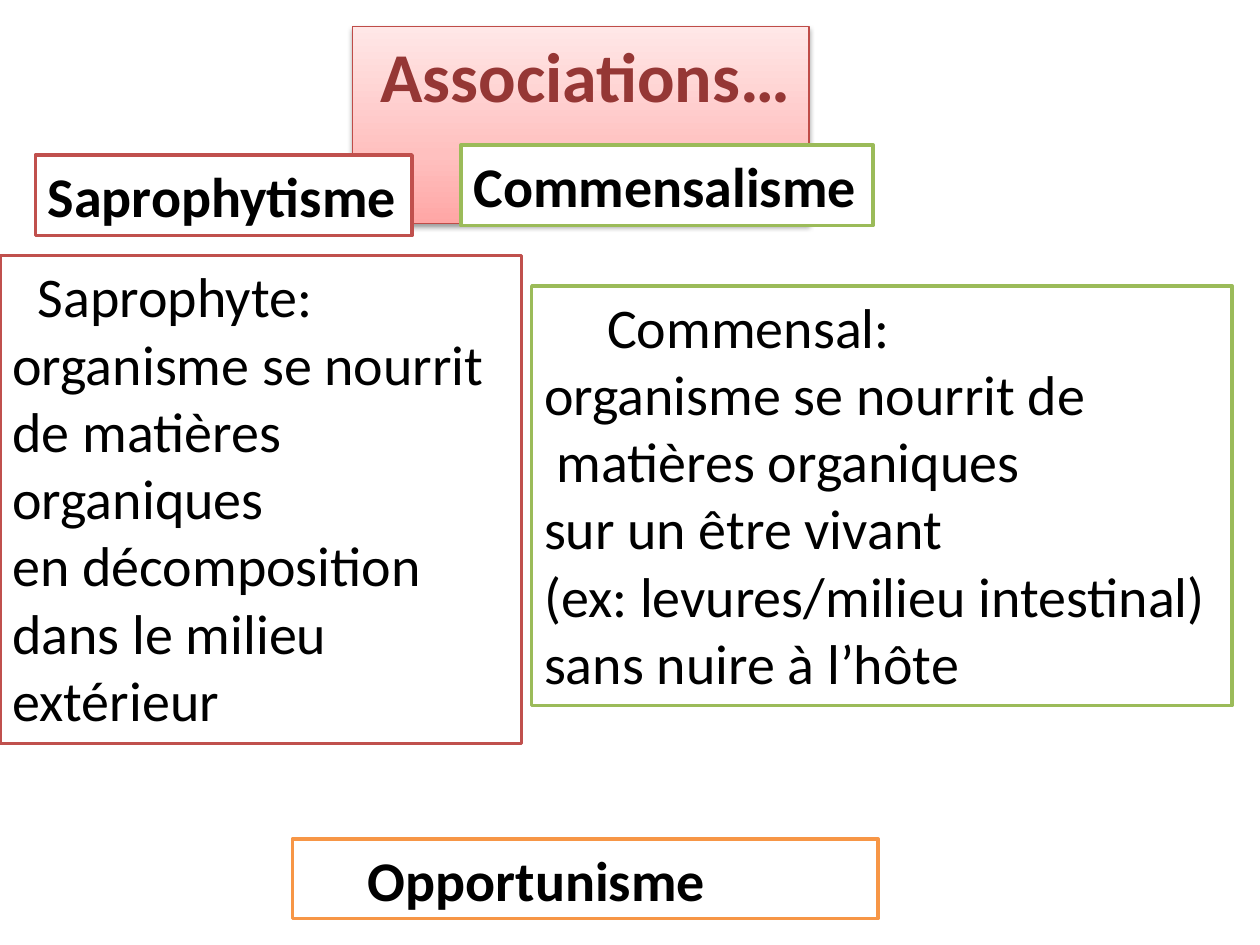
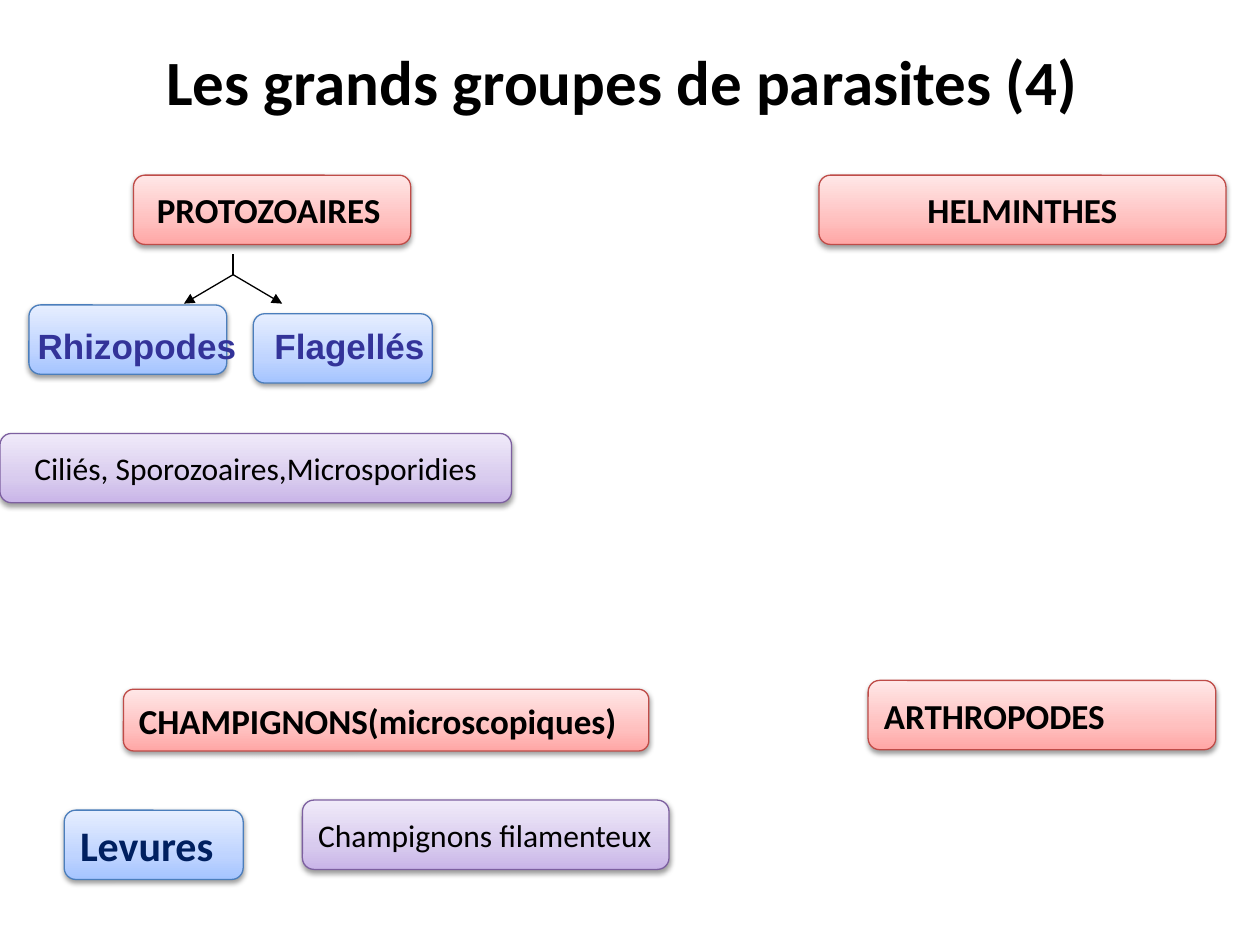
from dataclasses import dataclass
from typing import Optional

from lxml import etree
from pptx import Presentation
from pptx import util as u
from pptx.dml.color import RGBColor
from pptx.enum import shapes, text
from pptx.oxml import ns
from pptx.slide import Slide

BLACK, WHITE = "000000", "FFFFFF"
LEFT, CENTER = text.PP_ALIGN.LEFT, text.PP_ALIGN.CENTER
TOP, MIDDLE = text.MSO_ANCHOR.TOP, text.MSO_ANCHOR.MIDDLE
RECT = shapes.MSO_SHAPE.RECTANGLE
ROUNDED = shapes.MSO_SHAPE.ROUNDED_RECTANGLE


@dataclass(frozen=True)
class Look:
    line: str
    width: float = 2
    stops: tuple[str, ...] = ()


@dataclass(frozen=True)
class Line:
    wording: str
    indent: float = 0


@dataclass(frozen=True)
class Box:
    at: tuple[float, float, float, float]
    look: Optional[Look]
    lines: tuple[Line, ...] = ()
    size: float = 32
    bold: bool = False
    color: str = BLACK
    font: str = "Calibri"
    align: text.PP_ALIGN = LEFT
    anchor: text.MSO_ANCHOR = TOP
    wrap: bool = False
    tab: float = 0


RED = Look("BF4C48", 0.75, ("FFA6A5", "FFC0BF", "FFE7E7"))
BLUE = Look("4B7EBC", 0.75, ("A4C4FF", "BFD4FF", "E6EEFF"))
PURPLE = Look("7D60A0", 0.75, ("C9B5E8", "D8CBEE", "F0EAF9"))
RED_FRAME, GREEN_FRAME, ORANGE_FRAME = Look("C0504D"), Look("9BBB59"), Look("F79646")
WHITE_FRAME = Look(WHITE)
STOP_POSITIONS = (0, 35, 100)


def rgb(value: str) -> RGBColor:
    return RGBColor.from_string(value)


def apply(target, values: dict) -> None:
    for name, value in values.items():
        setattr(target, name, value)


def add_xml(parent, tag: str, **attributes):
    return etree.SubElement(parent, ns.qn(tag),
                            {key: str(value) for key, value in attributes.items()})


def paint_gradient(shape, stops: tuple[str, ...]) -> None:
    shape.fill.gradient()
    gradient = shape._element.spPr.find(ns.qn("a:gradFill"))
    for child in list(gradient):
        gradient.remove(child)
    stop_list = add_xml(gradient, "a:gsLst")
    for position, color in zip(STOP_POSITIONS, stops):
        stop = add_xml(stop_list, "a:gs", pos=position * 1000)
        add_xml(stop, "a:srgbClr", val=color)
    add_xml(gradient, "a:lin", ang=270 * 60000, scaled=0)


def cast_shadow(shape) -> None:
    effects = shape._element.spPr.find(ns.qn("a:effectLst"))
    shadow = add_xml(effects, "a:outerShdw", blurRad=u.Pt(3.1), dist=u.Pt(1.6),
                     dir=90 * 60000, rotWithShape=0)
    add_xml(add_xml(shadow, "a:srgbClr", val=BLACK), "a:alpha", val=38000)


def paint(shape, look: Look) -> None:
    if look.stops:
        paint_gradient(shape, look.stops)
    else:
        shape.fill.solid()
        shape.fill.fore_color.rgb = rgb(WHITE)
    shape.line.color.rgb = rgb(look.line)
    shape.line.width = u.Pt(look.width)
    shape.shadow.inherit = False
    if look.stops:
        cast_shadow(shape)


def write(shape, box: Box) -> None:
    frame = shape.text_frame
    fit = text.MSO_AUTO_SIZE.NONE if box.anchor == MIDDLE else text.MSO_AUTO_SIZE.SHAPE_TO_FIT_TEXT
    apply(frame, {"word_wrap": box.wrap, "vertical_anchor": box.anchor, "auto_size": fit})
    for index, line in enumerate(box.lines):
        paragraph = frame.add_paragraph() if index else frame.paragraphs[0]
        apply(paragraph, {"alignment": box.align, "space_before": u.Pt(0)})
        properties = paragraph._p.get_or_add_pPr()
        if line.indent:
            properties.set("marL", str(u.Inches(line.indent)))
            properties.set("indent", "0")
        if box.tab:
            add_xml(add_xml(properties, "a:tabLst"), "a:tab", pos=u.Inches(box.tab), algn="l")
        run = paragraph.add_run()
        run.text = line.wording
        apply(run.font, {"name": box.font, "size": u.Pt(box.size), "bold": box.bold})
        run.font.color.rgb = rgb(box.color)


def draw_box(slide: Slide, box: Box, outline: shapes.MSO_SHAPE) -> None:
    place = [u.Inches(value) for value in box.at]
    if box.look:
        shape = slide.shapes.add_shape(outline, *place)
        paint(shape, box.look)
    else:
        shape = slide.shapes.add_textbox(*place)
    if box.lines:
        write(shape, box)


def draw_title(slide: Slide, box: Box) -> None:
    title = slide.shapes.title
    apply(title, dict(zip(("left", "top", "width", "height"), map(u.Inches, box.at))))
    paint(title, box.look)
    write(title, box)


def draw_branch(slide: Slide, start: tuple[float, float], end: tuple[float, float],
                arrow: bool) -> None:
    branch = slide.shapes.add_connector(shapes.MSO_CONNECTOR.STRAIGHT,
                                        *(u.Inches(value) for value in start + end))
    branch.line.color.rgb = rgb(BLACK)
    branch.line.width = u.Pt(0.75)
    if arrow:
        add_xml(branch.line._get_or_add_ln(), "a:tailEnd", type="triangle")
    add_xml(branch._element.spPr, "a:effectLst")


def label(left: float, top: float, width: float, look: Look, wording: str, size: float = 20,
          color: str = BLACK, align: text.PP_ALIGN = LEFT, height: float = 0.55,
          indent: float = 0) -> Box:
    return Box((left, top, width, height), look, (Line(wording, indent),), size,
               look is not PURPLE, color, align=align, anchor=MIDDLE)


def build_associations(slide: Slide) -> None:
    draw_title(slide, Box((2.8, 0.21, 3.62, 0.77), RED, (Line("Associations…", 0.12),),
                          40, True, "953735"))
    saprophyte = (
        Line("Saprophyte:", 0.2),
        Line("organisme se nourrit de matières organiques"),
        Line("en décomposition dans le milieu extérieur"),
    )
    commensal = (
        Line("Commensal:", 0.5),
        Line("organisme se nourrit de"),
        Line("matières organiques", 0.1),
        Line("sur un être vivant"),
        Line("(ex: levures/milieu intestinal)"),
        Line("sans nuire à l’hôte"),
    )
    for box in (
        Box((2.32, 6.66, 4.65, 0.63), ORANGE_FRAME, (Line("Opportunisme", 0.5),),
            bold=True, wrap=True),
        Box((0.28, 1.23, 2.99, 0.64), RED_FRAME, (Line("Saprophytisme"),), bold=True),
        Box((3.66, 1.15, 3.27, 0.64), GREEN_FRAME, (Line("Commensalisme"),), bold=True),
        Box((0, 2.03, 4.14, 3.87), RED_FRAME, saprophyte, wrap=True),
        Box((4.22, 2.27, 5.56, 3.33), GREEN_FRAME, commensal, wrap=True),
    ):
        draw_box(slide, box, RECT)


def build_groups(slide: Slide) -> None:
    draw_title(slide, Box((1.22, 0.29, 7.51, 0.71), WHITE_FRAME,
                          (Line("Les grands groupes de parasites (4)"),), 36, True))
    for box in (
        Box((2.01, 2.49, 1.42, 0.55), BLUE),
        Box((0.23, 2.42, 1.57, 0.55), BLUE),
        Box((0.2, 2.53, 9.29, 0.43), None, (Line("Rhizopodes\tFlagellés"),), 20, True,
            "333399", "Arial", wrap=True, tab=1.88),
        label(1.06, 1.39, 2.2, RED, "PROTOZOAIRES", indent=0.06),
        label(6.5, 1.39, 3.23, RED, "HELMINTHES", align=CENTER),
        label(0.98, 5.47, 4.17, RED, "CHAMPIGNONS(microscopiques)", height=0.49),
        label(6.89, 5.4, 2.76, RED, "ARTHROPODES"),
        label(0.51, 6.43, 1.42, BLUE, "Levures", 24, "002060"),
        label(2.4, 6.35, 2.91, PURPLE, "Champignons filamenteux", 18),
        label(0, 3.44, 4.06, PURPLE, "Ciliés, Sporozoaires,Microsporidies", 18, align=CENTER),
    ):
        draw_box(slide, box, ROUNDED)
    fork = (1.85, 2.18)
    draw_branch(slide, (1.85, 2.02), fork, False)
    for tip in (1.46, 2.24):
        draw_branch(slide, fork, (tip, 2.41), True)


def main() -> None:
    deck = Presentation()
    apply(deck, {"slide_width": u.Inches(10), "slide_height": u.Inches(7.5)})
    title_only = deck.slide_layouts[5]
    for build in (build_associations, build_groups):
        build(deck.slides.add_slide(title_only))
    deck.save("out.pptx")


if __name__ == "__main__":
    main()
